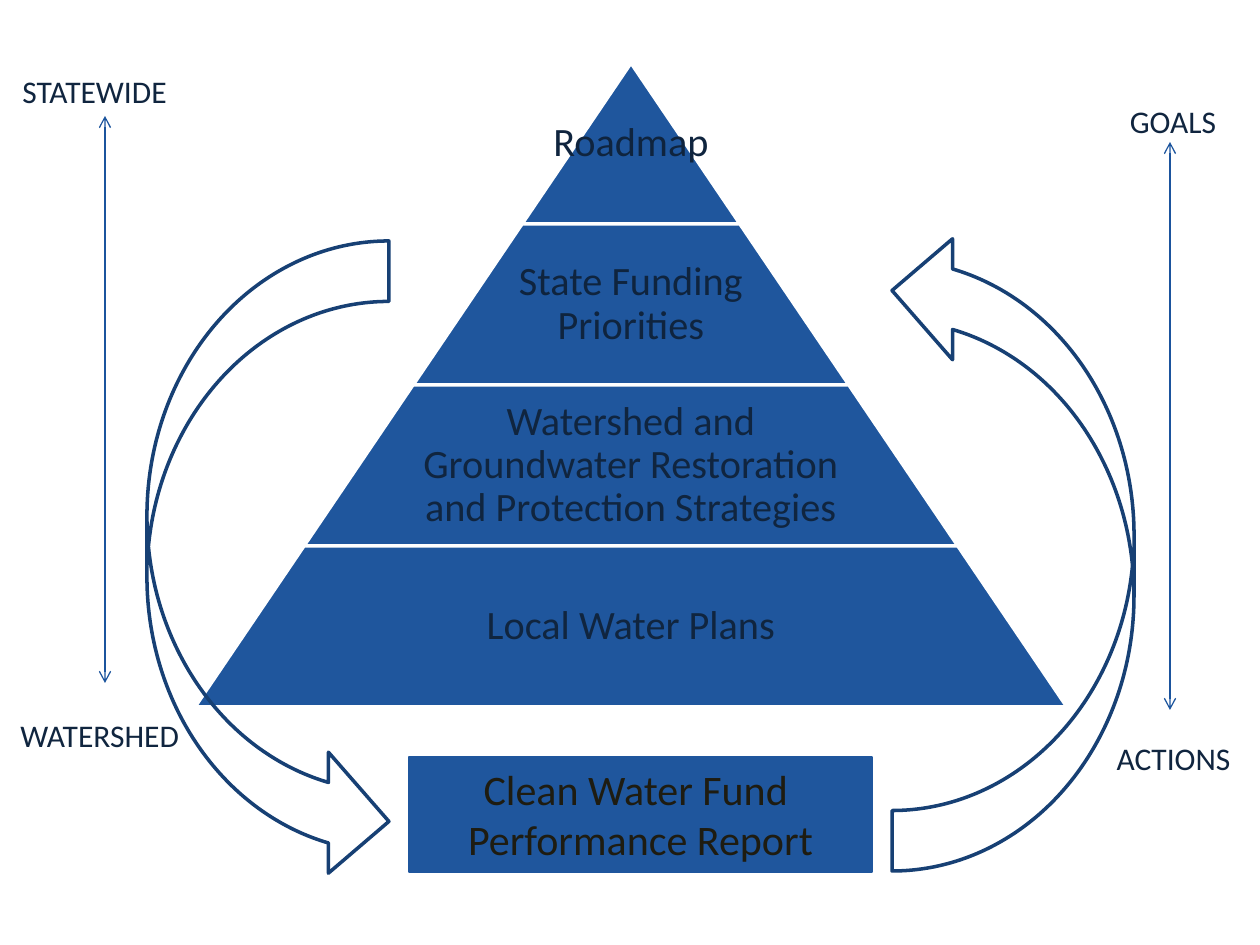
import pptx
import pptx.util
from lxml import etree
from pptx.dml.color import RGBColor
from pptx.enum.shapes import MSO_CONNECTOR, MSO_SHAPE
from pptx.enum.text import MSO_ANCHOR, MSO_AUTO_SIZE, PP_ALIGN
from pptx.oxml.ns import qn

# Pyramid levels from the top: text, text colour
LEVELS = [
    ("Roadmap", "level_text_dark"),
    ("State Funding Priorities", "level_text_dark"),
    ("Watershed and Groundwater Restoration and Protection Strategies", "text"),
    ("Local Water Plans", "text"),
]
REPORT_LINES = ["Clean Water Fund ", "Performance Report"]
REPORT_BOX = (409, 757, 463, 115)

# Scales: arrow x, top y, bottom y, alignment, labels as (text, left, top, width)
SCALES = [
    (105, 116, 683, PP_ALIGN.LEFT,
     [("STATEWIDE", 10, 66, 179), ("WATERSHED", 8, 710, 194)]),
    (1170, 142, 710, PP_ALIGN.CENTER,
     [("GOALS", 1110, 96, 126), ("ACTIONS", 1100, 733, 147)]),
]
LABEL_HEIGHT = 50

# Cycle arrows: left, top, rotation
CYCLE_ARROWS = [(147, 241, 0), (892, 230, 180)]
CYCLE_SIZE = (242, 641)

APEX_X, APEX_Y = 631, 63
LEVEL_STEP, LEVEL_HEIGHT = 218, 161
TEXT_SHARE = 0.65

THEME = {
    "font": "Calibri",
    "fill": "1F569D",
    "level_line": "FFFFFF",
    "scale_line": "1B549D",
    "cycle_line": "174074",
    "level_text_dark": "0F243E",
    "text": "10253F",
    "report_text": "1E1C11",
    "level_size": 23,
    "label_size": 18,
    "report_size": 24,
}


def px(*lengths):
    return [pptx.util.Emu(round(length * 914400 / 126)) for length in lengths]


def color(key):
    return RGBColor.from_string(THEME[key])


def style_shape(shape, fill, line, width):
    shape.shadow.inherit = False
    if fill:
        shape.fill.solid()
        shape.fill.fore_color.rgb = color(fill)
    else:
        shape.fill.background()
    shape.line.color.rgb = color(line)
    shape.line.width = pptx.util.Pt(width)


def write(frame, lines, size, text_color, align, spacing=None):
    frame.word_wrap = True
    frame.text = "\n".join(lines)
    for paragraph in frame.paragraphs:
        paragraph.alignment = align
        paragraph.line_spacing = spacing
        for run in paragraph.runs:
            run.font.name = THEME["font"]
            run.font.size = pptx.util.Pt(THEME[size])
            run.font.color.rgb = color(text_color)


def add_pyramid(shapes):
    for index, (text, text_color) in enumerate(LEVELS):
        width = LEVEL_STEP * (index + 1)
        top = APEX_Y + LEVEL_HEIGHT * index
        level = shapes.add_shape(
            MSO_SHAPE.TRAPEZOID, *px(APEX_X - width / 2, top, width, LEVEL_HEIGHT))
        level.adjustments[0] = LEVEL_STEP / 2 / LEVEL_HEIGHT
        style_shape(level, "fill", "level_line", 2)

        text_width = width * TEXT_SHARE if index else width
        caption = shapes.add_textbox(
            *px(APEX_X - text_width / 2, top, text_width, LEVEL_HEIGHT))
        frame = caption.text_frame
        frame.vertical_anchor = MSO_ANCHOR.MIDDLE
        frame.margin_left = frame.margin_right = pptx.util.Inches(0.03)
        frame.margin_top = frame.margin_bottom = pptx.util.Inches(0.03)
        write(frame, [text], "level_size", text_color, PP_ALIGN.CENTER, 0.9)


def add_scale(shapes, x, top, bottom, align, labels):
    """Draw a two-headed vertical arrow with a label at each end."""
    arrow = shapes.add_connector(MSO_CONNECTOR.STRAIGHT, *px(x, bottom, x, top))
    arrow.line.color.rgb = color("scale_line")
    arrow.line.width = pptx.util.Pt(0.75)
    line = arrow.line._get_or_add_ln()
    for end in ("a:headEnd", "a:tailEnd"):
        etree.SubElement(line, qn(end), type="arrow")
    etree.SubElement(arrow._element.spPr, qn("a:effectLst"))
    for text, left, label_top, width in labels:
        label = shapes.add_textbox(*px(left, label_top, width, LABEL_HEIGHT))
        write(label.text_frame, [text], "label_size", "text", align)
        label.text_frame.auto_size = MSO_AUTO_SIZE.SHAPE_TO_FIT_TEXT


def main():
    deck = pptx.Presentation()
    deck.slide_width, deck.slide_height = px(1260, 945)
    shapes = deck.slides.add_slide(deck.slide_layouts[6]).shapes

    add_pyramid(shapes.add_group_shape().shapes)
    for scale in SCALES:
        add_scale(shapes.add_group_shape().shapes, *scale)

    report = shapes.add_shape(MSO_SHAPE.RECTANGLE, *px(*REPORT_BOX))
    style_shape(report, "fill", "fill", 1)
    report.text_frame.vertical_anchor = MSO_ANCHOR.TOP
    write(report.text_frame, REPORT_LINES, "report_size", "report_text", PP_ALIGN.CENTER)
    report.text_frame.auto_size = MSO_AUTO_SIZE.SHAPE_TO_FIT_TEXT

    for left, top, rotation in CYCLE_ARROWS:
        cycle = shapes.add_shape(
            MSO_SHAPE.CURVED_RIGHT_ARROW, *px(left, top, *CYCLE_SIZE))
        cycle.rotation = rotation
        style_shape(cycle, None, "cycle_line", 2)

    deck.save("out.pptx")


if __name__ == "__main__":
    main()
